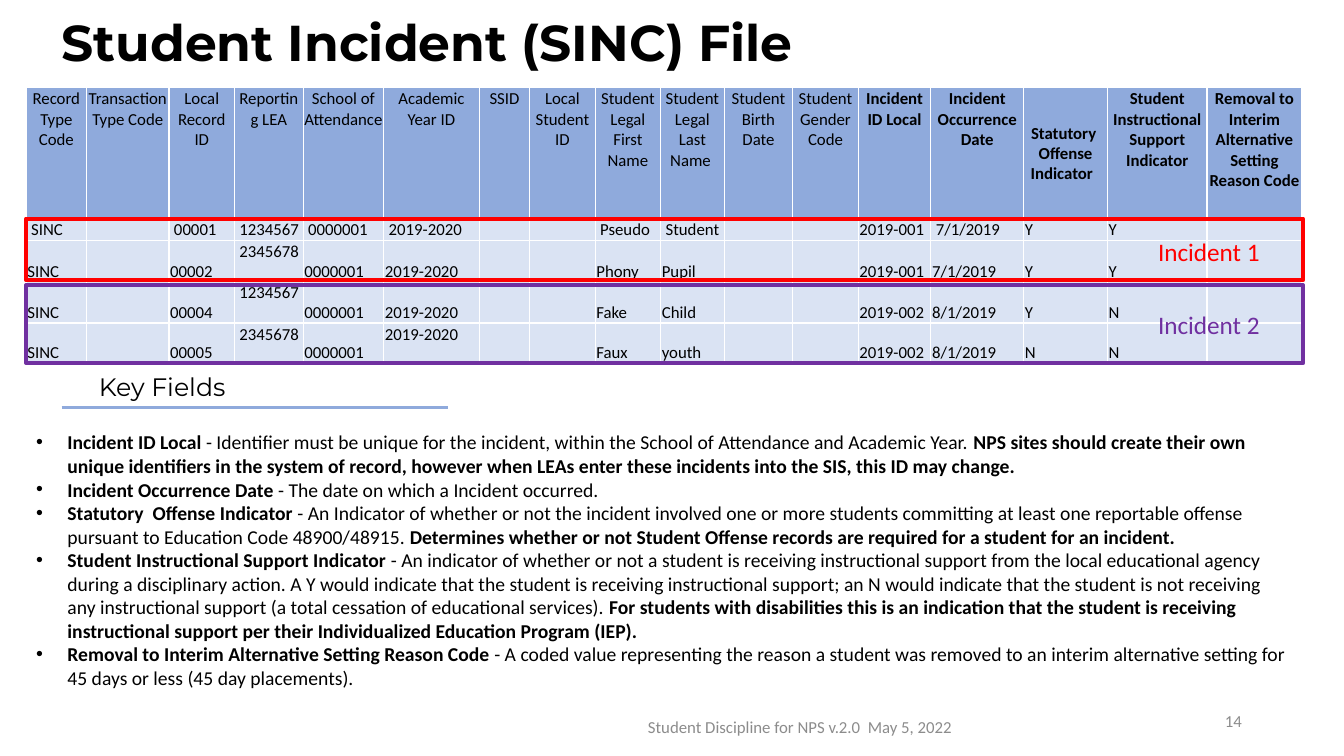
"""Build the Student Incident (SINC) file slide."""
from dataclasses import dataclass, field
from typing import Any

from lxml import etree
from pptx import Presentation
from pptx import util as u
from pptx.dml import color
from pptx.enum import shapes, text
from pptx.oxml import ns

COLORS = {
    "black": "000000", "white": "FFFFFF", "gray": "8C8C8C", "header": "8FAADC",
    "body": "DAE3F3", "red": "FF0000", "purple": "7030A0",
}
TOP, MIDDLE, BOTTOM = text.MSO_ANCHOR.TOP, text.MSO_ANCHOR.MIDDLE, text.MSO_ANCHOR.BOTTOM
LEFT, CENTER, RIGHT = text.PP_ALIGN.LEFT, text.PP_ALIGN.CENTER, text.PP_ALIGN.RIGHT
TABLE_LEFT, TABLE_TOP, TABLE_WIDTH = 0.66, 2.21, 32.18
COLUMN_WIDTHS = [1.52, 2.08, 1.65, 1.73, 2.03, 2.41, 1.27, 1.65, 1.65,
                 1.6, 1.73, 1.65, 1.83, 2.34, 2.11, 2.51, 2.39]
ROW_HEIGHTS = [3.3, 0.53, 1.04, 1.04, 1.0]
CELL_MARGINS = {"margin_left": u.Cm(0.03), "margin_right": u.Cm(0.03),
                "margin_top": u.Cm(0.03), "margin_bottom": u.Cm(0)}
HEADERS = [
    "Record Type Code", "Transaction Type Code", "Local Record ID", "Reporting LEA",
    "School of Attendance", "Academic Year ID", "SSID", "Local Student ID",
    "Student Legal First Name", "Student Legal Last Name ", "Student Birth Date",
    "Student Gender Code", "Incident ID Local", "Incident Occurrence Date",
    "Statutory  Offense Indicator  ", "Student Instructional Support Indicator",
    "Removal to Interim Alternative Setting Reason Code",
]
FIRST_KEY_COLUMN = HEADERS.index("Incident ID Local")
FILLED_COLUMNS = [0, 2, 3, 4, 5, 8, 9, 12, 13, 14, 15]
RECORDS = [
    [" SINC", " 00001", " 1234567", " 0000001", " 2019-2020", " Pseudo", " Student",
     "2019-001", " 7/1/2019", "Y", "Y"],
    ["SINC", "00002", " 2345678", "0000001", "2019-2020", "Phony", "Pupil",
     "2019-001", "7/1/2019", "Y", "Y"],
    ["SINC", "00004", " 1234567", "0000001", "2019-2020", "Fake", "Child",
     "2019-002", "8/1/2019", "Y", "N"],
    ["SINC", "00005", " 2345678", "0000001", "2019-2020", "Faux", "youth",
     "2019-002", "8/1/2019", "N", "N"],
]
RAISED_CELLS = {(2, 3), (3, 3), (4, 3), (4, 5)}
KEY_FIELDS = [
    ("Incident ID Local ",
     "- Identifier must be unique for the incident, within the School of Attendance and "
     "Academic Year. ",
     "NPS sites should create their own unique identifiers in the system of record, however "
     "when LEAs enter these incidents into the SIS, this ID may change."),
    ("Incident Occurrence Date ", "- The date on which a Incident occurred."),
    ("Statutory  Offense Indicator ",
     "- An Indicator of whether or not the incident involved one or more students committing "
     "at least one reportable offense pursuant to Education Code 48900/48915. ",
     "Determines whether or not Student Offense records are required for a student for an "
     "incident."),
    ("Student Instructional Support Indicator ",
     "- An indicator of whether or not a student is receiving instructional support from the "
     "local educational agency during a disciplinary action. A Y would indicate that the "
     "student is receiving instructional support; an N would indicate that the student is not "
     "receiving any instructional support (a total cessation of educational services). ",
     "For students with disabilities this is an indication that the student is receiving "
     "instructional support per their Individualized Education Program (IEP)."),
    ("Removal to Interim Alternative Setting Reason Code ",
     "- A coded value representing the reason a student was removed to an interim alternative "
     "setting for 45 days or less (45 day placements)."),
]


@dataclass(frozen=True)
class Style:
    size: float = 12
    color: str = "black"
    bold: bool = False
    name: str = "Calibri"


@dataclass(frozen=True)
class Label:
    wording: str
    place: tuple[float, float, float, float]
    style: Style = field(default_factory=Style)
    align: Any = LEFT
    anchor: Any = MIDDLE


@dataclass(frozen=True)
class Incident:
    color: str
    top: float
    height: float


LABELS = [
    Label("Student Incident (SINC) File", (1.3, 0.28, 29.21, 1.52),
          Style(36, bold=True, name="Montserrat")),
    Label("Key Fields", (2.24, 9.22, 15.19, 1.02), Style(18, name="Montserrat"), anchor=TOP),
    Label("Student Discipline for NPS v.2.0  May 5, 2022", (14.45, 17.81, 11.43, 1.02),
          Style(color="gray"), CENTER),
    Label("14", (23.93, 17.65, 7.62, 1.02), Style(color="gray"), RIGHT),
    Label("Incident 1", (28.8, 5.84, 3.33, 0.99), Style(18, "red"), CENTER),
    Label("Incident 2", (28.8, 7.67, 3.33, 0.99), Style(18, "purple"), CENTER),
]
INCIDENTS = [Incident("red", 5.51, 1.55), Incident("purple", 7.19, 1.96)]


def assign(target: Any, values: dict[str, Any]) -> None:
    for name, value in values.items():
        setattr(target, name, value)


def rgb(name: str) -> color.RGBColor:
    return color.RGBColor.from_string(COLORS[name])


def add_span(para: Any, wording: str, style: Style) -> None:
    span = para.add_run()
    span.text = wording
    assign(span.font, {"size": u.Pt(style.size), "bold": style.bold, "name": style.name})
    span.font.color.rgb = rgb(style.color)


def add_box(page: Any, place: tuple[float, float, float, float], anchor: Any) -> Any:
    frame = page.shapes.add_textbox(*map(u.Cm, place)).text_frame
    assign(frame, {"word_wrap": True, "vertical_anchor": anchor})
    return frame


def add_label(page: Any, label: Label) -> None:
    para = add_box(page, label.place, label.anchor).paragraphs[0]
    para.alignment = label.align
    add_span(para, label.wording, label.style)


def add_borders(cell: Any) -> None:
    properties = cell._tc.get_or_add_tcPr()
    for side in ("lnL", "lnR", "lnT", "lnB"):
        line = etree.SubElement(properties, ns.qn(f"a:{side}"), w=str(u.Pt(1)))
        fill = etree.SubElement(line, ns.qn("a:solidFill"))
        etree.SubElement(fill, ns.qn("a:srgbClr"), val=COLORS["white"])


def fill_cell(cell: Any, wording: str, row: int, column: int) -> None:
    header = row == 0
    raised = row == 1 or (row, column) in RAISED_CELLS
    anchor = TOP if header or raised else BOTTOM
    if row < 2 and column == 14:
        anchor = MIDDLE
    add_borders(cell)
    cell.fill.solid()
    cell.fill.fore_color.rgb = rgb("header" if header else "body")
    assign(cell, CELL_MARGINS | {"vertical_anchor": anchor})
    para = cell.text_frame.paragraphs[0]
    para.alignment = CENTER if header else LEFT
    if wording:
        add_span(para, wording, Style(bold=header and column >= FIRST_KEY_COLUMN))
    else:
        etree.SubElement(para._p, ns.qn("a:endParaRPr"), sz="1200")


def add_records(page: Any) -> None:
    rows = [dict(enumerate(HEADERS))] + [dict(zip(FILLED_COLUMNS, record)) for record in RECORDS]
    table = page.shapes.add_table(
        len(rows), len(HEADERS), u.Cm(TABLE_LEFT), u.Cm(TABLE_TOP),
        u.Cm(TABLE_WIDTH), u.Cm(sum(ROW_HEIGHTS))).table
    assign(table, {"first_row": False, "horz_banding": False})
    for column, width in zip(table.columns, COLUMN_WIDTHS):
        column.width = u.Cm(width)
    for index, (row, height) in enumerate(zip(table.rows, ROW_HEIGHTS)):
        row.height = u.Cm(height)
        for column, cell in enumerate(row.cells):
            fill_cell(cell, rows[index].get(column, ""), index, column)


def add_key_fields(page: Any) -> None:
    frame = add_box(page, (TABLE_LEFT, 10.72, TABLE_WIDTH, 8.13), TOP)
    for index, parts in enumerate(KEY_FIELDS):
        para = frame.add_paragraph() if index else frame.paragraphs[0]
        properties = para._p.get_or_add_pPr()
        properties.set("marL", str(u.Cm(0.79)))
        properties.set("indent", str(u.Cm(-0.79)))
        etree.SubElement(properties, ns.qn("a:buFont"), typeface="Arial")
        etree.SubElement(properties, ns.qn("a:buChar"), char="•")
        for position, wording in enumerate(parts):
            add_span(para, wording, Style(14, bold=position % 2 == 0))


def add_rule(page: Any) -> None:
    rule = page.shapes.add_connector(
        shapes.MSO_CONNECTOR.STRAIGHT, u.Cm(1.55), u.Cm(10.26), u.Cm(11.28), u.Cm(10.26))
    rule.line.width = u.Pt(2.25)
    rule.line.color.rgb = rgb("header")
    etree.SubElement(rule._element.spPr, ns.qn("a:effectLst"))


def add_incident(page: Any, incident: Incident) -> None:
    outline = page.shapes.add_shape(
        shapes.MSO_SHAPE.RECTANGLE, u.Cm(TABLE_LEFT), u.Cm(incident.top),
        u.Cm(TABLE_WIDTH), u.Cm(incident.height))
    outline.shadow.inherit = False
    outline.fill.background()
    outline.line.width = u.Pt(3)
    outline.line.color.rgb = rgb(incident.color)


def main() -> None:
    deck = Presentation()
    assign(deck, {"slide_width": u.Cm(33.87), "slide_height": u.Cm(19.05)})
    page = deck.slides.add_slide(deck.slide_layouts[6])
    add_records(page)
    add_key_fields(page)
    add_rule(page)
    for incident in INCIDENTS:
        add_incident(page, incident)
    for label in LABELS:
        add_label(page, label)
    deck.save("out.pptx")


if __name__ == "__main__":
    main()
